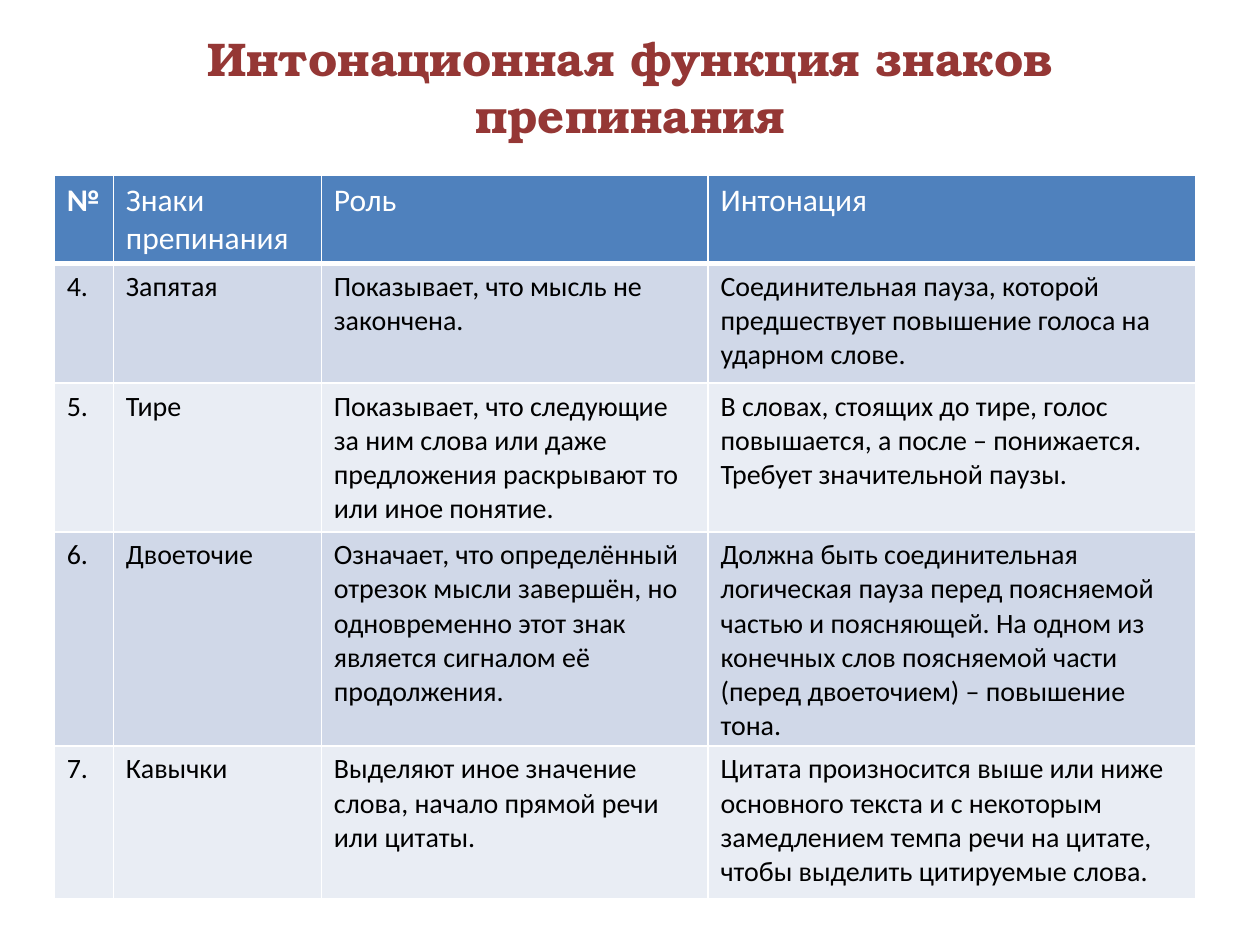
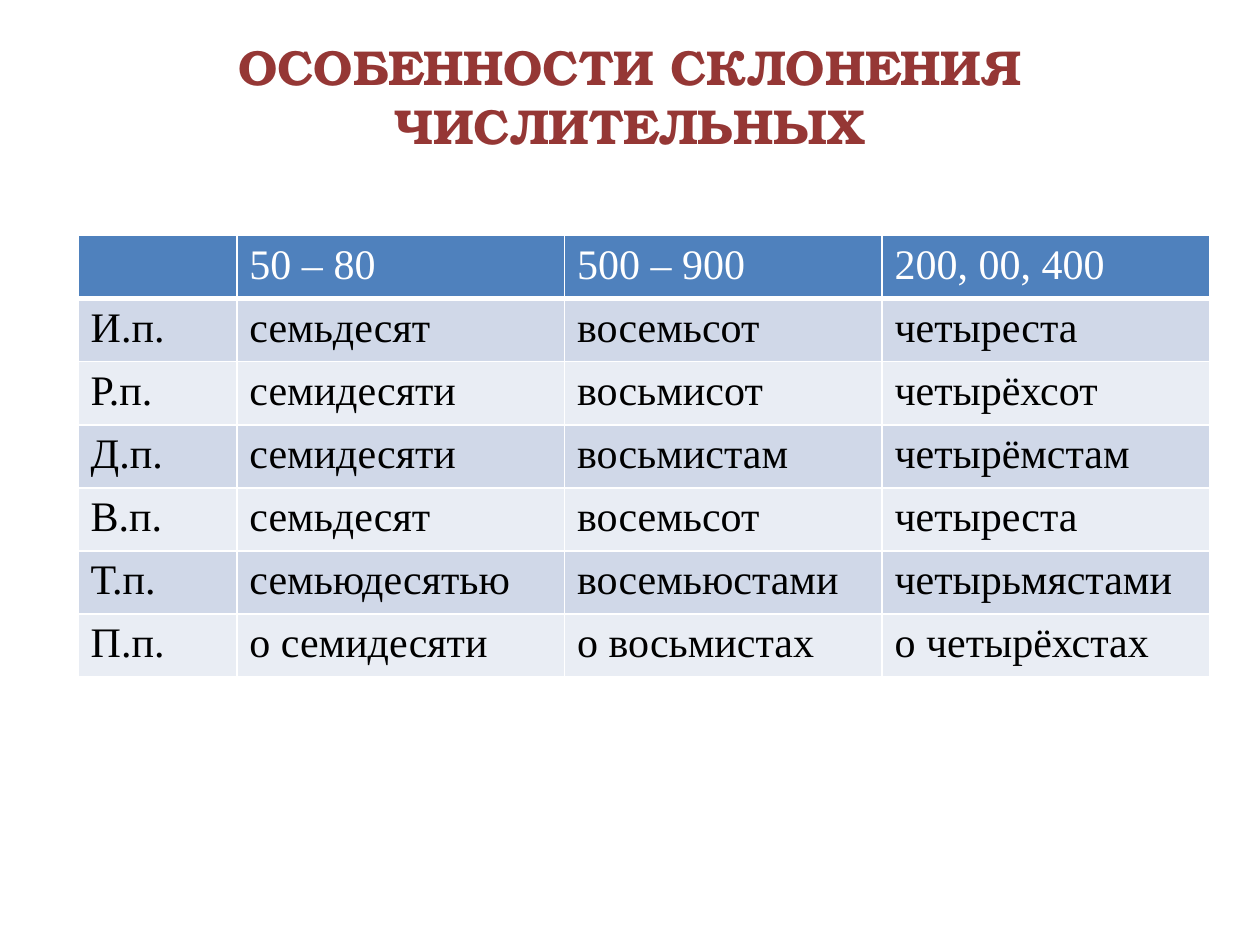
"""Build two lesson slides, each with a title and a banded table."""
from dataclasses import dataclass

import pptx
import pptx.dml.color
import pptx.enum.text
import pptx.oxml
import pptx.oxml.ns
import pptx.slide
import pptx.table
import pptx.util
from pptx.util import Inches

TITLE_FONT = "TeX Gyre Bonum"
TITLE_COLOR = "953735"
HEADER_FILL = "4F81BD"
BAND_FILLS = ("E9EDF4", "D0D8E8")
WHITE = "FFFFFF"
BLACK = "000000"


@dataclass(frozen=True)
class Title:
    text: str
    top: float
    height: float
    size: int


@dataclass(frozen=True)
class Grid:
    left: float
    top: float
    col_widths: list[float]
    row_heights: list[float]
    font: str
    header_size: int
    body_size: int
    rows: list[list[str]]
    bold_first_header: bool = False


PUNCTUATION = Grid(
    0.43, 1.39, [0.47, 1.65, 3.07, 3.87], [0.42, 0.95, 1.18, 1.65, 1.21],
    "Calibri", 18, 16,
    [
        ["№", "Знаки препинания", "Роль", "Интонация"],
        ["4.", "Запятая", "Показывает, что мысль не закончена.",
         "Соединительная пауза, которой предшествует повышение голоса на "
         "ударном слове."],
        ["5.", "Тире",
         "Показывает, что следующие за ним слова или даже предложения "
         "раскрывают то или иное понятие.",
         "В словах, стоящих до тире, голос повышается, а после – понижается. "
         "Требует значительной паузы."],
        ["6.", "Двоеточие",
         "Означает, что определённый отрезок мысли завершён, но одновременно "
         "этот знак является сигналом её продолжения.",
         "Должна быть соединительная логическая пауза перед поясняемой частью "
         "и поясняющей. На одном из конечных слов поясняемой части (перед "
         "двоеточием) – повышение тона."],
        ["7.", "Кавычки",
         "Выделяют иное значение слова, начало прямой речи или цитаты.",
         "Цитата произносится выше или ниже основного текста и с некоторым "
         "замедлением темпа речи на цитате, чтобы выделить цитируемые слова."],
    ],
    bold_first_header=True,
)

NUMERALS = Grid(
    0.62, 1.87, [1.26, 2.6, 2.52, 2.6], [0.41] * 7,
    "Times New Roman", 24, 24,
    [
        ["", "50 – 80", "500 – 900", "200, 00, 400"],
        ["И.п.", "семьдесят", "восемьсот", "четыреста"],
        ["Р.п.", "семидесяти", "восьмисот", "четырёхсот"],
        ["Д.п.", "семидесяти", "восьмистам", "четырёмстам"],
        ["В.п.", "семьдесят", "восемьсот", "четыреста"],
        ["Т.п.", "семьюдесятью", "восемьюстами", "четырьмястами"],
        ["П.п.", "о семидесяти", "о восьмистах", "о четырёхстах"],
    ],
)

SLIDES = [
    (Title("Интонационная функция знаков препинания", 0.3, 0.77, 27), PUNCTUATION),
    (Title("ОСОБЕННОСТИ СКЛОНЕНИЯ ЧИСЛИТЕЛЬНЫХ", 0.29, 0.94, 28), NUMERALS),
]


def rgb(color: str) -> pptx.dml.color.RGBColor:
    """Return the colour for a hex string."""
    return pptx.dml.color.RGBColor.from_string(color)


def format_runs(tf, font: str, size: int, color: str, bold: bool) -> None:
    """Give every run of a text frame the same font."""
    for p in tf.paragraphs:
        for r in p.runs:
            r.font.name = font
            r.font.size = pptx.util.Pt(size)
            r.font.bold = bold
            r.font.color.rgb = rgb(color)


def add_title(s: pptx.slide.Slide, title: Title) -> None:
    """Add a centred slide title."""
    sp = s.shapes.add_textbox(
        Inches(0.5), Inches(title.top), Inches(9), Inches(title.height))
    tf = sp.text_frame
    tf.word_wrap = True
    tf.vertical_anchor = pptx.enum.text.MSO_ANCHOR.MIDDLE
    tf.text = title.text
    tf.paragraphs[0].alignment = pptx.enum.text.PP_ALIGN.CENTER
    format_runs(tf, TITLE_FONT, title.size, TITLE_COLOR, True)


def set_borders(cell: pptx.table._Cell, top: int, bottom: int) -> None:
    """Draw white cell borders, with top and bottom widths in points."""
    tc_pr = cell._tc.get_or_add_tcPr()
    for side, width in (("L", 1), ("R", 1), ("T", top), ("B", bottom)):
        tc_pr.append(pptx.oxml.parse_xml(
            f'<a:ln{side} {pptx.oxml.ns.nsdecls("a")} w="{pptx.util.Pt(width)}">'
            f'<a:solidFill><a:srgbClr val="{WHITE}"/></a:solidFill></a:ln{side}>'))


def add_grid(s: pptx.slide.Slide, grid: Grid) -> None:
    """Add a table with a header row and banded body rows."""
    table = s.shapes.add_table(
        len(grid.rows), len(grid.col_widths), Inches(grid.left), Inches(grid.top),
        Inches(sum(grid.col_widths)), Inches(sum(grid.row_heights))).table
    table.first_row = table.horz_banding = False
    for column, width in zip(table.columns, grid.col_widths):
        column.width = Inches(width)
    for i, (texts, height) in enumerate(zip(grid.rows, grid.row_heights)):
        table.rows[i].height = Inches(height)
        header = i == 0
        fill = HEADER_FILL if header else BAND_FILLS[i % 2]
        color = WHITE if header else BLACK
        size = grid.header_size if header else grid.body_size
        for j, text in enumerate(texts):
            cell = table.cell(i, j)
            set_borders(cell, 3 if i == 1 else 1, 3 if header else 1)
            cell.fill.solid()
            cell.fill.fore_color.rgb = rgb(fill)
            cell.text_frame.text = text
            bold = grid.bold_first_header and header and j == 0
            format_runs(cell.text_frame, grid.font, size, color, bold)


def main() -> None:
    """Build and save the presentation."""
    prs = pptx.Presentation()
    prs.slide_width = Inches(10)
    prs.slide_height = Inches(7.5)
    for title, grid in SLIDES:
        s = prs.slides.add_slide(prs.slide_layouts[6])
        add_title(s, title)
        add_grid(s, grid)
    prs.save("out.pptx")


if __name__ == "__main__":
    main()
